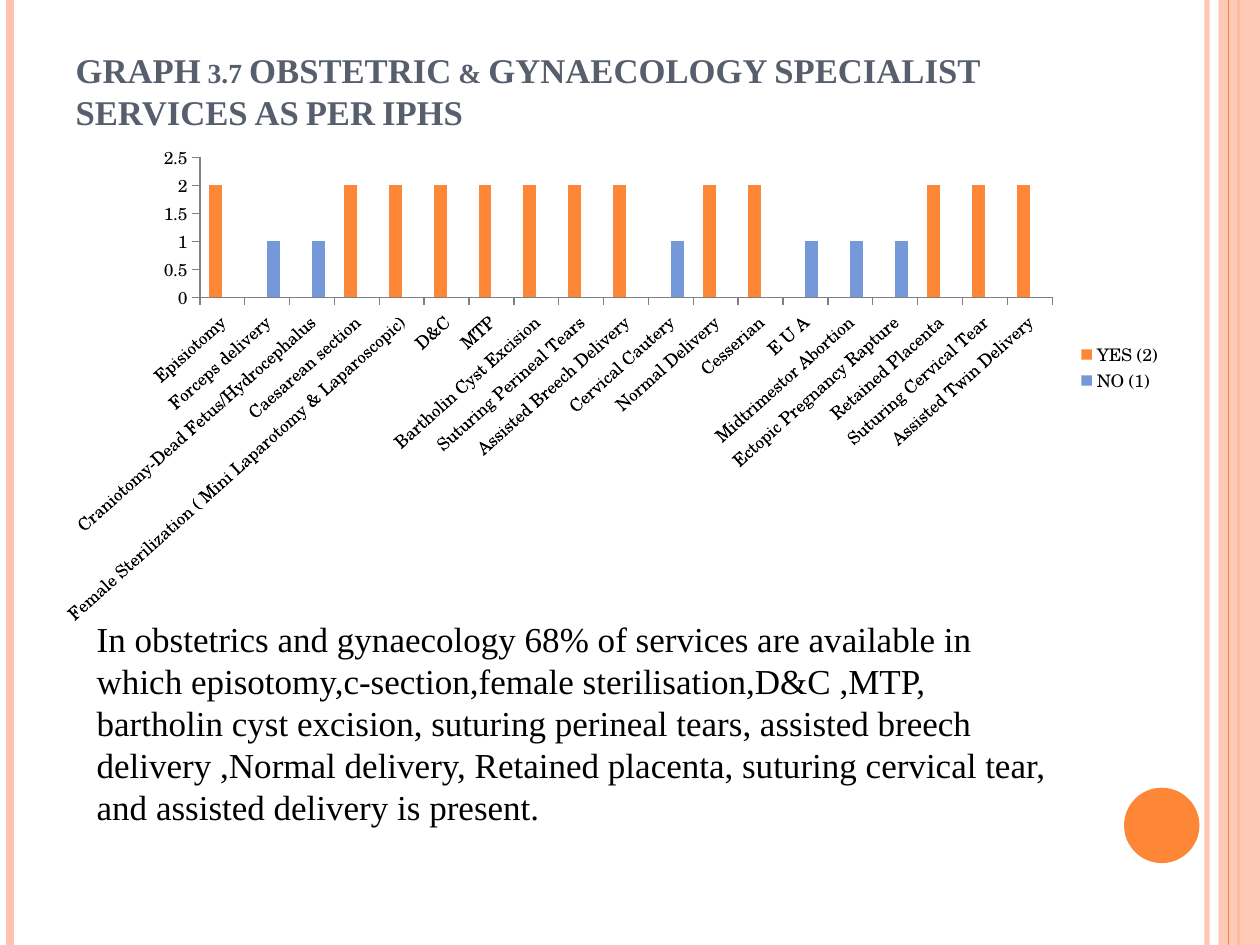
from lxml import etree
from pptx import Presentation
from pptx.chart.data import CategoryChartData
from pptx.dml.color import RGBColor
from pptx.enum.chart import XL_CHART_TYPE, XL_LEGEND_POSITION, XL_TICK_MARK
from pptx.enum.shapes import MSO_CONNECTOR, MSO_SHAPE
from pptx.enum.text import MSO_ANCHOR, PP_ALIGN
from pptx.oxml import parse_xml
from pptx.oxml.ns import nsdecls, qn
from pptx.util import Cm, Pt

COLUMNS = XL_CHART_TYPE.COLUMN_CLUSTERED
LEGEND_RIGHT = XL_LEGEND_POSITION.RIGHT
TICK_OUTSIDE = XL_TICK_MARK.OUTSIDE
STRAIGHT = MSO_CONNECTOR.STRAIGHT
RECTANGLE, OVAL = MSO_SHAPE.RECTANGLE, MSO_SHAPE.OVAL
BOTTOM, LEFT = MSO_ANCHOR.BOTTOM, PP_ALIGN.LEFT

ORANGE = RGBColor(0xFE, 0x86, 0x37)
PEACH = RGBColor(0xFE, 0xC3, 0xAE)
BLUE = RGBColor(0x75, 0x98, 0xD9)
SLATE = RGBColor(0x57, 0x5F, 0x6D)
GRAY = RGBColor(0x80, 0x80, 0x80)
BLACK = RGBColor(0, 0, 0)
TEXT_FONT = "Times New Roman"
CHART_FONT = "TeX Gyre Schola"
WIDTH, HEIGHT = Cm(25.4), Cm(19.05)

# Content
TITLE = "GRAPH 3.7 OBSTETRIC & GYNAECOLOGY SPECIALIST SERVICES AS PER IPHS"
SUMMARY = (
    "In obstetrics and gynaecology 68% of services are available in which "
    "episotomy,c-section,female sterilisation,D&C ,MTP, bartholin cyst excision, "
    "suturing perineal tears, assisted breech delivery ,Normal delivery, Retained "
    "placenta, suturing cervical tear, and assisted delivery is present."
)
SERVICES = [  # service, available
    ("Episiotomy", True),
    ("Forceps delivery", False),
    ("Craniotomy-Dead Fetus/Hydrocephalus", False),
    ("Caesarean section", True),
    ("Female Sterilization ( Mini Laparotomy & Laparoscopic)", True),
    ("D&C", True),
    ("MTP", True),
    ("Bartholin Cyst Excision", True),
    ("Suturing Perineal Tears", True),
    ("Assisted Breech Delivery", True),
    ("Cervical Cautery", False),
    ("Normal Delivery", True),
    ("Cesserian", True),
    ("E U A", False),
    ("Midtrimestor Abortion", False),
    ("Ectopic Pregnancy Rapture", False),
    ("Retained Placenta", True),
    ("Suturing Cervical Tear", True),
    ("Assisted Twin Delivery", True),
]
SERIES = [("YES (2)", True, 2, ORANGE), ("NO (1)", False, 1, BLUE)]
STRIPES_BEHIND = [  # x in cm, colour, points, opacity in percent
    (24.33, PEACH, 3, 93),
    (0.2, PEACH, 4.5, 100),
    (24.97, ORANGE, 1.5, 100),
]
STRIPE_IN_FRONT = (24.77, ORANGE, 0.75, 100)

# Chart proportions: the long labels need the space below the plot
PLOT_LAYOUT = {"x": 0.13, "y": 0.02, "w": 0.76, "h": 0.29}
LEGEND_LAYOUT = {"x": 0.91, "y": 0.4, "w": 0.08, "h": 0.11}
LABEL_ANGLE = -42


def set_opacity(parent, percent):
    color = next(parent.iter(qn("a:srgbClr")))
    etree.SubElement(color, qn("a:alpha")).set("val", str(percent * 1000))


def add_stripe(slide, x, color, points, opacity):
    stripe = slide.shapes.add_connector(STRAIGHT, Cm(x), 0, Cm(x), HEIGHT)
    stripe.line.color.rgb = color
    stripe.line.width = Pt(points)
    properties = stripe.element.spPr
    if opacity < 100:
        set_opacity(properties, opacity)
    etree.SubElement(properties, qn("a:effectLst"))


def add_filled(slide, kind, left, top, width, height, color):
    shape = slide.shapes.add_shape(kind, left, top, width, height)
    shape.shadow.inherit = False
    shape.fill.solid()
    shape.fill.fore_color.rgb = color
    shape.line.fill.background()
    return shape


def set_font(font, name, size, color):
    font.name = name
    font.size = Pt(size)
    font.color.rgb = color


def set_layout(parent, position, sizes, target=""):
    """Fix a chart part at fractions of the chart's width and height."""
    for old_layout in parent.findall(qn("c:layout")):
        parent.remove(old_layout)
    values = "".join(f'<c:{key} val="{value}"/>' for key, value in sizes.items())
    parent.insert(position, parse_xml(
        f'<c:layout {nsdecls("c")}><c:manualLayout>{target}'
        f'<c:xMode val="edge"/><c:yMode val="edge"/>{values}'
        "</c:manualLayout></c:layout>"))


def add_title(slide):
    title = slide.shapes.title
    title.left, title.top = Cm(1.27), Cm(0.76)
    title.width, title.height = Cm(20.75), Cm(3.18)
    frame = title.text_frame
    frame.text = TITLE
    frame.word_wrap = True
    frame.vertical_anchor = BOTTOM
    frame.margin_bottom = Cm(1.27)
    paragraph = frame.paragraphs[0]
    paragraph.alignment = LEFT
    set_font(paragraph.font, TEXT_FONT, 19.8, SLATE)
    paragraph.font.bold = True
    paragraph.runs[0].font._element.set("cap", "small")


def add_services_chart(slide):
    data = CategoryChartData()
    data.categories = [service for service, _ in SERVICES]
    for name, wanted, value, _ in SERIES:
        data.add_series(name, [value if available == wanted else None
                               for _, available in SERVICES])
    chart = slide.shapes.add_chart(
        COLUMNS, Cm(1.09), Cm(2.92), Cm(22.61), Cm(9.8), data).chart
    set_font(chart.font, CHART_FONT, 10, BLACK)
    chart.has_title = False
    chart.has_legend = True
    chart.legend.position = LEGEND_RIGHT
    chart.legend.include_in_layout = False

    # Columns
    plot = chart.plots[0]
    plot.gap_width, plot.overlap = 150, 0
    plot.vary_by_categories = False
    for series, (_, _, _, color) in zip(plot.series, SERIES):
        series.format.fill.solid()
        series.format.fill.fore_color.rgb = color

    # Axes
    for axis in (chart.category_axis, chart.value_axis):
        axis.has_major_gridlines = False
        axis.major_tick_mark = TICK_OUTSIDE
        axis.format.line.color.rgb = GRAY
        axis.format.line.width = Pt(0.75)
        set_font(axis.tick_labels.font, CHART_FONT, 10, BLACK)
    chart.value_axis.minimum_scale = 0
    chart.value_axis.maximum_scale = 2.5
    chart.value_axis.major_unit = 0.5
    labels = chart.category_axis._element.find(qn("c:txPr"))
    labels.find(qn("a:bodyPr")).set("rot", str(LABEL_ANGLE * 60000))

    # Places of plot and legend
    set_layout(chart._chartSpace.chart.plotArea, 0, PLOT_LAYOUT,
               '<c:layoutTarget val="inner"/>')
    set_layout(chart.legend._element, 1, LEGEND_LAYOUT)


def add_summary(slide):
    box = slide.shapes.add_textbox(Cm(1.7), Cm(12.32), Cm(19.81), Cm(4.52))
    frame = box.text_frame
    frame.word_wrap = True
    frame.text = SUMMARY
    set_font(frame.paragraphs[0].font, TEXT_FONT, 20, BLACK)


def main():
    presentation = Presentation()
    presentation.slide_width, presentation.slide_height = WIDTH, HEIGHT
    slide = presentation.slides.add_slide(presentation.slide_layouts[5])

    # Border decoration
    for stripe in STRIPES_BEHIND:
        add_stripe(slide, *stripe)
    band = add_filled(slide, RECTANGLE, Cm(24.56), 0, Cm(0.84), HEIGHT, PEACH)
    set_opacity(band.element.spPr, 87)
    add_stripe(slide, *STRIPE_IN_FRONT)
    add_filled(slide, OVAL, Cm(22.66), Cm(15.88), Cm(1.52), Cm(1.52), ORANGE)

    add_title(slide)
    add_services_chart(slide)
    add_summary(slide)
    presentation.save("out.pptx")


if __name__ == "__main__":
    main()
